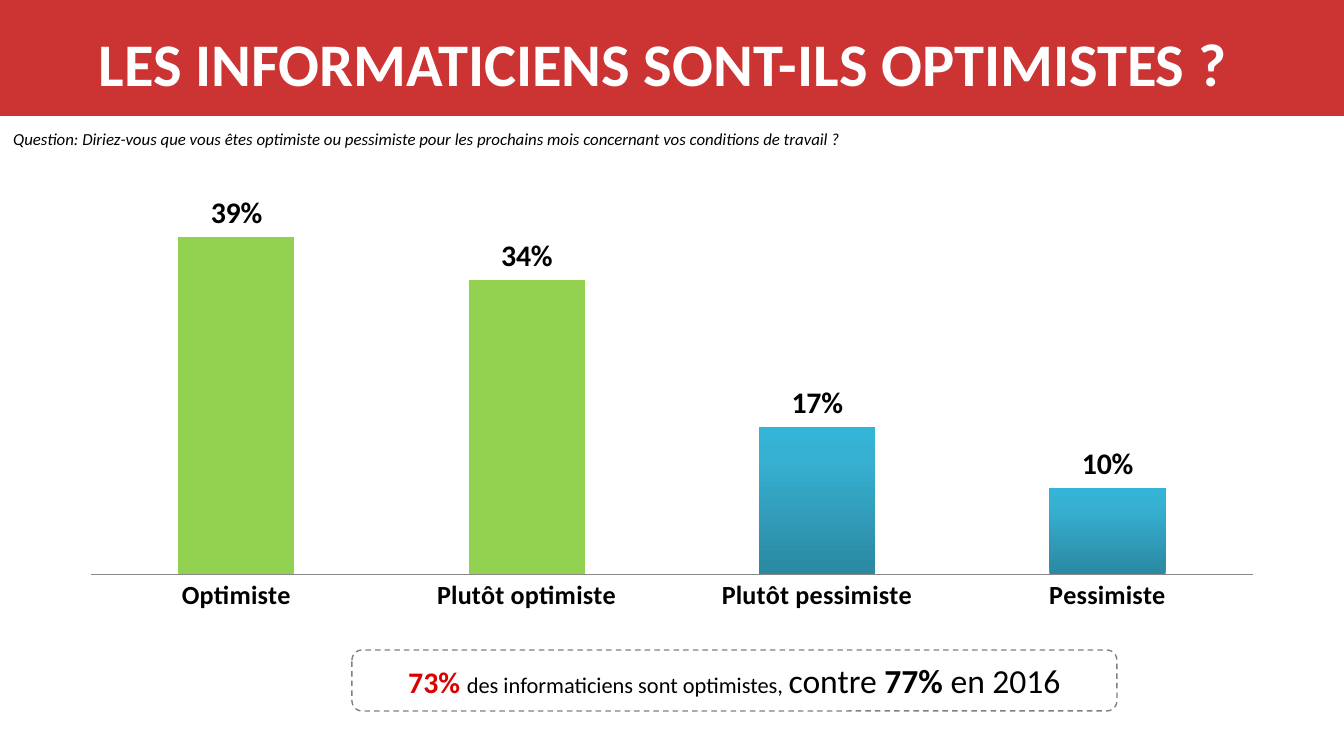
from dataclasses import dataclass

from lxml.etree import SubElement
from pptx import Presentation
from pptx.chart.data import CategoryChartData
from pptx.dml.color import RGBColor
from pptx.enum.chart import XL_CHART_TYPE as ChartType, XL_LABEL_POSITION as LabelPos
from pptx.enum.chart import XL_TICK_LABEL_POSITION as TickLabelPos, XL_TICK_MARK as TickMark
from pptx.enum.dml import MSO_LINE_DASH_STYLE as Dash
from pptx.enum.shapes import MSO_SHAPE as Shape
from pptx.enum.text import MSO_ANCHOR as Anchor, MSO_AUTO_SIZE as AutoSize, PP_ALIGN as Align
from pptx.oxml import parse_xml
from pptx.oxml.ns import nsdecls, qn
from pptx.util import Emu, Pt

EMU_PER_PX = 914400 / 134.4
FONT = "Calibri"
RED = RGBColor(0xCC, 0x33, 0x33)
ACCENT = RGBColor(0xDA, 0x00, 0x00)
GREEN = RGBColor(0x92, 0xD0, 0x50)
GRAY = RGBColor(0x80, 0x80, 0x80)
AXIS_GRAY = RGBColor(0x88, 0x88, 0x88)
WHITE = RGBColor(0xFF, 0xFF, 0xFF)
BLACK = RGBColor(0x00, 0x00, 0x00)
BLUE_STOPS = [
    (0, RGBColor(0x2A, 0x88, 0xA2)),
    (80, RGBColor(0x37, 0xB1, 0xD2)),
    (100, RGBColor(0x34, 0xB4, 0xD6)),
]


@dataclass(frozen=True)
class Box:
    x: int
    y: int
    w: int
    h: int

    def emu(self) -> tuple[Emu, ...]:
        return tuple(px(v) for v in (self.x, self.y, self.w, self.h))


@dataclass(frozen=True)
class Span:
    text: str
    size: float
    color: RGBColor = BLACK
    bold: bool = False
    italic: bool = False


@dataclass(frozen=True)
class Answer:
    label: str
    share: float
    optimistic: bool


ANSWERS = [
    Answer("Optimiste", 0.39, True),
    Answer("Plutôt optimiste", 0.34, True),
    Answer("Plutôt pessimiste", 0.17, False),
    Answer("Pessimiste", 0.10, False),
]


def px(n: int) -> Emu:
    return Emu(round(n * EMU_PER_PX))


def style(font, size: float, color: RGBColor = BLACK, bold: bool = False, italic: bool = False) -> None:
    font.name, font.size, font.bold, font.italic = FONT, Pt(size), bold, italic
    font.color.rgb = color


def write(p, spans: list[Span], align: Align = Align.LEFT) -> None:
    p.alignment = align
    for span in spans:
        r = p.add_run()
        r.text = span.text
        style(r.font, span.size, span.color, span.bold, span.italic)


def add_title(s, box: Box, band: Box, text: str) -> None:
    """Fill the title placeholder and put a red band behind it."""
    sp = s.shapes.add_shape(Shape.RECTANGLE, *band.emu())
    sp.shadow.inherit = False
    sp.fill.solid()
    sp.fill.fore_color.rgb = RED
    sp.line.fill.background()
    title = s.shapes.title
    title._element.addprevious(sp._element)
    title.left, title.top, title.width, title.height = box.emu()
    tf = title.text_frame
    tf.auto_size = AutoSize.NONE
    tf.vertical_anchor = Anchor.MIDDLE
    write(tf.paragraphs[0], [Span(text, 32.4, WHITE, bold=True)], Align.CENTER)


def add_question(s, box: Box, text: str) -> None:
    tf = s.shapes.add_textbox(*box.emu()).text_frame
    tf.word_wrap = True
    tf.auto_size = AutoSize.SHAPE_TO_FIT_TEXT
    write(tf.paragraphs[0], [Span(text, 9, italic=True)])


def fill_gradient(series, stops: list[tuple[int, RGBColor]]) -> None:
    gs = "".join(
        f'<a:gs pos="{pos * 1000}"><a:srgbClr val="{color}"/></a:gs>' for pos, color in stops
    )
    series._element.get_or_add_spPr().insert(0, parse_xml(
        f'<a:gradFill {nsdecls("a")} rotWithShape="1"><a:gsLst>{gs}</a:gsLst>'
        '<a:lin ang="16200000" scaled="0"/></a:gradFill>'
    ))


def set_plot_layout(chart, x: float, y: float, w: float, h: float) -> None:
    """Fix the inner plot area, as fractions of the chart."""
    area = chart._chartSpace.chart.plotArea
    for old in area.findall(qn("c:layout")):
        area.remove(old)
    layout = parse_xml(f'<c:layout {nsdecls("c")}/>')
    area.insert(0, layout)
    manual = SubElement(layout, qn("c:manualLayout"))
    settings = dict(layoutTarget="inner", xMode="edge", yMode="edge", x=x, y=y, w=w, h=h)
    for tag, value in settings.items():
        SubElement(manual, qn(f"c:{tag}")).set("val", str(value))


def add_answer_chart(s, box: Box, answers: list[Answer]) -> None:
    data = CategoryChartData(number_format="0%")
    data.categories = [a.label for a in answers]
    data.add_series("Series 1", [a.share for a in answers])
    chart = s.shapes.add_chart(ChartType.COLUMN_CLUSTERED, *box.emu(), data).chart
    chart.has_legend = chart.has_title = False
    style(chart.font, 18)
    set_plot_layout(chart, 0.02, 0.02, 0.96, 0.88)

    val_axis = chart.value_axis
    val_axis.visible = val_axis.has_major_gridlines = False
    val_axis.minimum_scale, val_axis.maximum_scale = 0, 0.45
    cat_axis = chart.category_axis
    cat_axis.major_tick_mark = cat_axis.minor_tick_mark = TickMark.NONE
    cat_axis.tick_label_position = TickLabelPos.NEXT_TO_AXIS
    cat_axis.format.line.color.rgb = AXIS_GRAY
    cat_axis.format.line.width = Pt(0.75)
    style(cat_axis.tick_labels.font, 14, bold=True)

    plot = chart.plots[0]
    plot.gap_width, plot.overlap = 150, -25
    plot.vary_by_categories = False
    series = plot.series[0]
    series.invert_if_negative = False
    fill_gradient(series, BLUE_STOPS)
    for i, answer in enumerate(answers):
        if answer.optimistic:
            fill = series.points[i].format.fill
            fill.solid()
            fill.fore_color.rgb = GREEN
    labels = series.data_labels
    labels.show_value = True
    labels.number_format, labels.number_format_is_linked = "0%", False
    labels.position = LabelPos.OUTSIDE_END
    style(labels.font, 16, bold=True)


def add_summary(s, box: Box, spans: list[Span]) -> None:
    sp = s.shapes.add_shape(Shape.ROUNDED_RECTANGLE, *box.emu())
    sp.shadow.inherit = False
    sp.fill.background()
    sp.line.color.rgb = GRAY
    sp.line.width = Pt(0.75)
    sp.line.dash_style = Dash.DASH
    tf = sp.text_frame
    tf.word_wrap = True
    tf.auto_size = AutoSize.SHAPE_TO_FIT_TEXT
    tf.vertical_anchor = Anchor.TOP
    write(tf.paragraphs[0], spans, Align.CENTER)


def main() -> None:
    prs = Presentation()
    prs.slide_width, prs.slide_height = px(1344), px(756)
    s = prs.slides.add_slide(prs.slide_layouts[5])
    add_title(s, Box(58, -1, 1210, 126), Box(0, 0, 1344, 116),
              "LES INFORMATICIENS SONT-ILS OPTIMISTES ?")
    add_answer_chart(s, Box(67, 176, 1210, 443), ANSWERS)
    add_question(s, Box(0, 122, 874, 34),
                 "Question: Diriez-vous que vous êtes optimiste ou pessimiste pour les "
                 "prochains mois concernant vos conditions de travail ?")
    add_summary(s, Box(352, 650, 765, 61), [
        Span("73% ", 16, ACCENT, bold=True),
        Span("des informaticiens sont optimistes, ", 12),
        Span("contre ", 18),
        Span("77% ", 18, bold=True),
        Span("en 2016", 18),
    ])
    prs.save("out.pptx")


if __name__ == "__main__":
    main()
